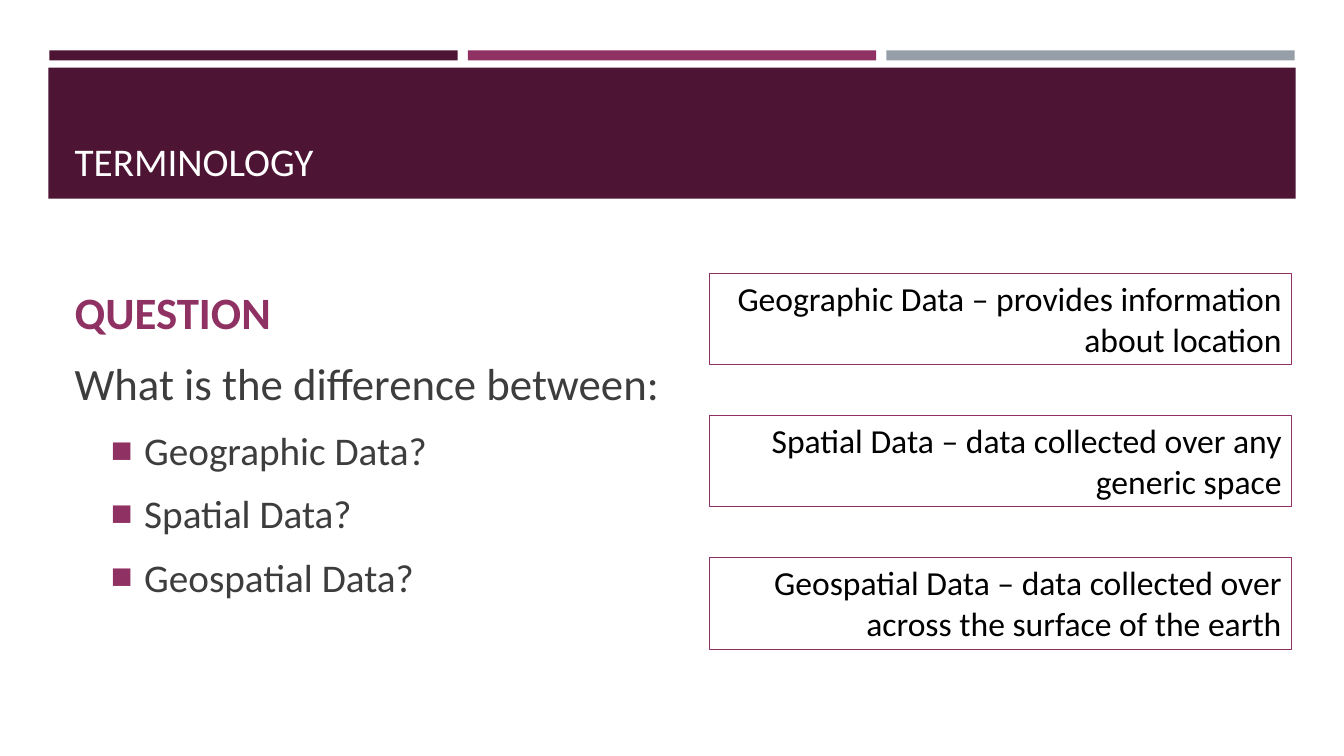
from lxml import etree
from pptx import Presentation
from pptx.dml.color import RGBColor
from pptx.enum import shapes, text
from pptx.oxml import ns
from pptx.util import Inches, Pt

PLUM = RGBColor(0x4D, 0x14, 0x34)
MAGENTA = RGBColor(0x90, 0x31, 0x63)
GREY = RGBColor(0x96, 0x9F, 0xA7)
CHARCOAL = RGBColor(0x3D, 0x3D, 0x3D)
WHITE = RGBColor(0xFF, 0xFF, 0xFF)
BLACK = RGBColor(0, 0, 0)

QUESTION = [
    ("QUESTION", 32, MAGENTA, True, False),
    ("What is the difference between:", 32, CHARCOAL, False, False),
    ("Geographic Data?", 28, CHARCOAL, False, True),
    ("Spatial Data?", 28, CHARCOAL, False, True),
    ("Geospatial Data?", 28, CHARCOAL, False, True),
]
DEFINITIONS = [
    "Geographic Data – provides information about location",
    "Spatial Data – data collected over any generic space",
    "Geospatial Data – data collected over across the surface of the earth",
]


def style(paragraph, size, color, bold=False):
    font = paragraph.font
    font.name, font.size, font.bold = "Calibri", Pt(size), bold
    font.color.rgb = color


def place(shape, left, top, width, height):
    shape.left, shape.top = Inches(left), Inches(top)
    shape.width, shape.height = Inches(width), Inches(height)


def add_rectangle(slide, left, top, width, height):
    rectangle = slide.shapes.add_shape(
        shapes.MSO_SHAPE.RECTANGLE,
        Inches(left), Inches(top), Inches(width), Inches(height))
    rectangle.shadow.inherit = False
    return rectangle


def add_band(slide, left, top, width, height, color):
    """Add a filled band behind the placeholders."""
    band = add_rectangle(slide, left, top, width, height)
    band.fill.solid()
    band.fill.fore_color.rgb = color
    band.line.fill.background()
    slide.shapes._spTree.insert(2, band._element)


def set_bullet(paragraph, bulleted):
    properties = paragraph._p.get_or_add_pPr()
    margin, indent = (0.69, -0.33) if bulleted else (0, 0)
    properties.set("marL", str(Inches(margin)))
    properties.set("indent", str(Inches(indent)))

    def add(tag, parent=properties, **attributes):
        return etree.SubElement(parent, ns.qn(tag), **attributes)

    if bulleted:
        add("a:srgbClr", add("a:buClr"), val=str(MAGENTA))
        add("a:buSzPct", val="92000")
        add("a:buFont", typeface="Arial")
        add("a:buChar", char="■")
    else:
        add("a:buNone")


def fill_title(title):
    place(title, 0.64, 0.77, 12.06, 1.11)
    frame = title.text_frame
    frame.text = "TERMINOLOGY"
    frame.vertical_anchor = text.MSO_ANCHOR.BOTTOM
    frame.auto_size = text.MSO_AUTO_SIZE.NONE
    heading = frame.paragraphs[0]
    heading.alignment = text.PP_ALIGN.LEFT
    style(heading, 28, WHITE)


def fill_question(body):
    place(body, 0.64, 2.38, 6.08, 4.02)
    frame = body.text_frame
    frame.text = "\n".join(line[0] for line in QUESTION)
    frame.vertical_anchor = text.MSO_ANCHOR.MIDDLE
    frame.auto_size = text.MSO_AUTO_SIZE.NONE
    for paragraph, (_, size, color, bold, bulleted) in zip(frame.paragraphs, QUESTION):
        paragraph.level = int(bulleted)
        paragraph.space_after = Pt(6)
        set_bullet(paragraph, bulleted)
        style(paragraph, size, color, bold)


def add_definition(slide, top, wording):
    box = add_rectangle(slide, 7.04, top, 5.77, 0.91)
    box.fill.background()
    box.line.color.rgb = MAGENTA
    box.line.width = Pt(0.75)
    frame = box.text_frame
    frame.text = wording
    frame.word_wrap = True
    frame.vertical_anchor = text.MSO_ANCHOR.TOP
    definition = frame.paragraphs[0]
    definition.alignment = text.PP_ALIGN.RIGHT
    style(definition, 24, BLACK)


def main():
    deck = Presentation()
    deck.slide_width, deck.slide_height = Inches(13.33), Inches(7.5)
    slide = deck.slides.add_slide(deck.slide_layouts[1])

    for column, color in enumerate((PLUM, MAGENTA, GREY)):
        add_band(slide, 0.49 + column * 4.15, 0.5, 4.05, 0.1, color)
    add_band(slide, 0.48, 0.67, 12.37, 1.3, PLUM)

    fill_title(slide.shapes.title)
    fill_question(slide.placeholders[1])
    for row, wording in enumerate(DEFINITIONS):
        add_definition(slide, 2.71 + row * 1.41, wording)

    deck.save("out.pptx")


if __name__ == "__main__":
    main()
